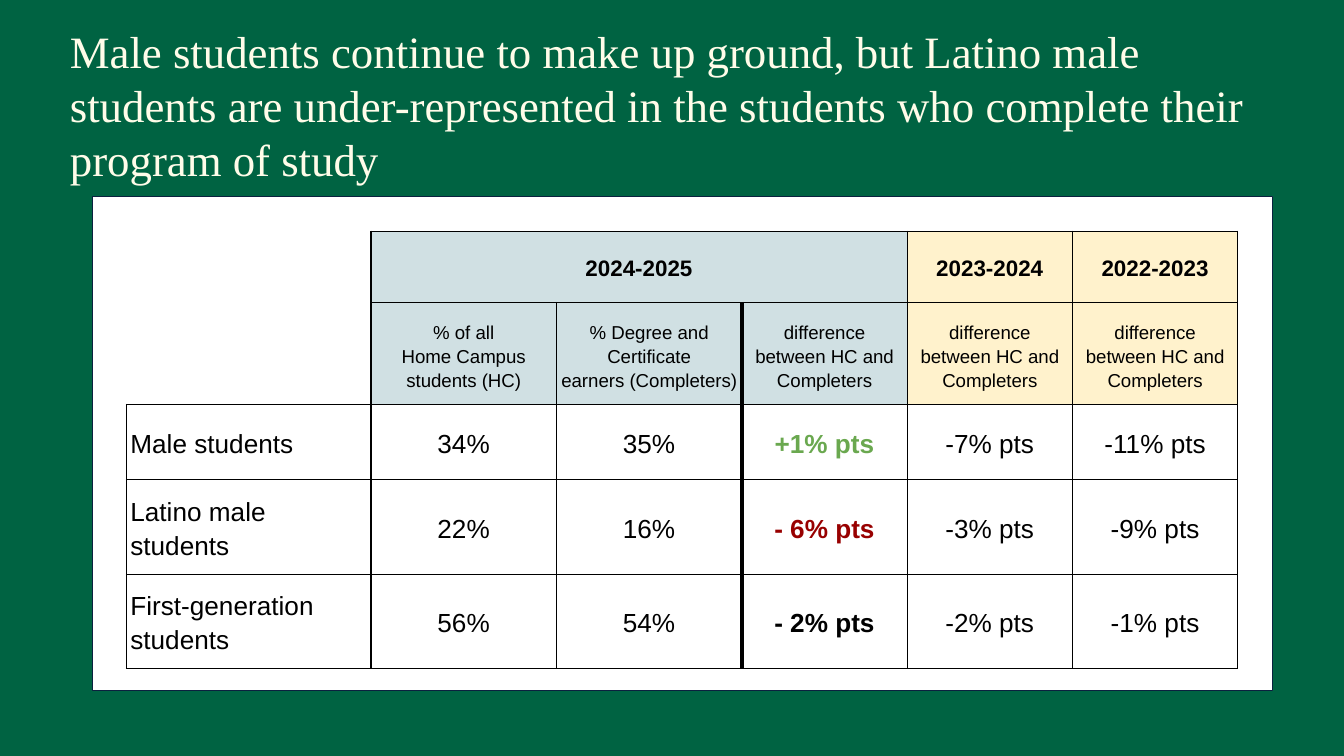
from lxml import etree
from pptx import Presentation
from pptx.dml.color import RGBColor
from pptx.enum.shapes import MSO_SHAPE
from pptx.enum.text import MSO_ANCHOR, MSO_AUTO_SIZE, PP_ALIGN
from pptx.oxml.ns import qn
from pptx.util import Inches, Pt

RECTANGLE = MSO_SHAPE.RECTANGLE
TOP, MIDDLE, BOTTOM = MSO_ANCHOR.TOP, MSO_ANCHOR.MIDDLE, MSO_ANCHOR.BOTTOM
LEFT, CENTER = PP_ALIGN.LEFT, PP_ALIGN.CENTER
NO_AUTOFIT = MSO_AUTO_SIZE.NONE

GREEN = RGBColor(0x00, 0x63, 0x42)
CREAM = RGBColor(0xFF, 0xFC, 0xE9)
NAVY = RGBColor(0x0B, 0x21, 0x3F)
WHITE = RGBColor(0xFF, 0xFF, 0xFF)
BLACK = RGBColor(0x00, 0x00, 0x00)
PALE_BLUE = RGBColor(0xD0, 0xE0, 0xE3)
PALE_YELLOW = RGBColor(0xFF, 0xF2, 0xCC)
GAIN_GREEN = RGBColor(0x6A, 0xA8, 0x4F)
LOSS_RED = RGBColor(0x98, 0x00, 0x00)

TITLE = (
    "Male students continue to make up ground, but Latino male students are "
    "under-represented in the students who complete their program of study"
)
DIFFERENCE = "difference\nbetween HC and Completers"
ROWS = [
    ["", "2024-2025", "", "", "2023-2024", "2022-2023"],
    ["", "% of all\nHome Campus\nstudents (HC)",
     "% Degree and Certificate\nearners (Completers)",
     DIFFERENCE, DIFFERENCE, DIFFERENCE],
    ["Male students", "34%", "35%", "+1% pts", "-7% pts", "-11% pts"],
    ["Latino male students", "22%", "16%", "- 6% pts", "-3% pts", "-9% pts"],
    ["First-generation students", "56%", "54%", "- 2% pts", "-2% pts", "-1% pts"],
]
COLUMN_WIDTHS = [1.82, 1.38, 1.38, 1.23, 1.23, 1.23]
ROW_HEIGHTS = [0.53, 0.76, 0.56, 0.56, 0.56]
HEADER_ROWS = 2
FONT_SIZES = [12, 10, 14, 14, 14]
CURRENT_YEAR_LAST = 3
HIGHLIGHT_COLUMN = 3
HIGHLIGHTS = {2: GAIN_GREEN, 3: LOSS_RED}
THIN, THICK = 0.75, 2.25


def set_borders(cell, row, column):
    widths = dict.fromkeys("LRTB", THIN)
    if row < HEADER_ROWS and column == 0:
        widths.update(L=0, T=0, B=THIN if row == HEADER_ROWS - 1 else 0)
    elif row > 0 and column == HIGHLIGHT_COLUMN - 1:
        widths["R"] = THICK
    elif row > 0 and column == HIGHLIGHT_COLUMN:
        widths["L"] = THICK
    properties = cell._tc.get_or_add_tcPr()
    for side, width in widths.items():
        line = etree.SubElement(properties, qn(f"a:ln{side}"), w=str(int(Pt(width))))
        if width:
            fill = etree.SubElement(line, qn("a:solidFill"))
            etree.SubElement(fill, qn("a:srgbClr"), val=str(BLACK))
        else:
            etree.SubElement(line, qn("a:noFill"))


def fill_cell(cell, row, column):
    if row >= HEADER_ROWS:
        color = WHITE
    elif column == 0:
        cell.fill.background()
        return
    else:
        color = PALE_BLUE if column <= CURRENT_YEAR_LAST else PALE_YELLOW
    cell.fill.solid()
    cell.fill.fore_color.rgb = color


def write_cell(cell, row, column):
    cell.margin_left = cell.margin_right = Inches(0.03)
    cell.margin_top = cell.margin_bottom = Inches(0.1)
    cell.vertical_anchor = BOTTOM if row == 1 else MIDDLE
    cell.text = ROWS[row][column]
    highlighted = row >= HEADER_ROWS and column == HIGHLIGHT_COLUMN
    for paragraph in cell.text_frame.paragraphs:
        paragraph.alignment = CENTER if column else LEFT
        paragraph.line_spacing = 1.15
        paragraph.font.name = "Arial"
        paragraph.font.size = Pt(FONT_SIZES[row])
        paragraph.font.bold = row == 0 or highlighted
        paragraph.font.color.rgb = HIGHLIGHTS.get(row, BLACK) if highlighted else BLACK


def add_results_table(slide):
    table = slide.shapes.add_table(
        len(ROWS), len(COLUMN_WIDTHS), Inches(0.94), Inches(1.72),
        Inches(sum(COLUMN_WIDTHS)), Inches(sum(ROW_HEIGHTS)),
    ).table
    table.first_row = table.horz_banding = False
    for column, width in zip(table.columns, COLUMN_WIDTHS):
        column.width = Inches(width)
    for row, height in zip(table.rows, ROW_HEIGHTS):
        row.height = Inches(height)
    for row in range(len(ROWS)):
        for column in range(len(COLUMN_WIDTHS)):
            cell = table.cell(row, column)
            set_borders(cell, row, column)
            fill_cell(cell, row, column)
            write_cell(cell, row, column)
    table.cell(0, 1).merge(table.cell(0, CURRENT_YEAR_LAST))


def add_panel(slide):
    panel = slide.shapes.add_shape(
        RECTANGLE, Inches(0.69), Inches(1.46), Inches(8.78), Inches(3.68))
    panel.shadow.inherit = False
    panel.fill.solid()
    panel.fill.fore_color.rgb = WHITE
    panel.line.color.rgb = NAVY
    panel.line.width = Pt(0.75)


def write_title(slide):
    title = slide.shapes.title
    title.left, title.top = Inches(0.42), Inches(0.08)
    title.width, title.height = Inches(9.16), Inches(0.84)
    frame = title.text_frame
    frame.text = TITLE
    frame.word_wrap = True
    frame.auto_size = NO_AUTOFIT
    frame.vertical_anchor = TOP
    frame.margin_left = frame.margin_right = Inches(0.1)
    frame.margin_top = frame.margin_bottom = Inches(0.1)
    paragraph = frame.paragraphs[0]
    paragraph.alignment = LEFT
    paragraph.line_spacing = 1.0
    paragraph.font.name = "Times New Roman"
    paragraph.font.size = Pt(24)
    paragraph.font.color.rgb = CREAM


def main():
    presentation = Presentation()
    presentation.slide_width = Inches(10)
    presentation.slide_height = presentation.slide_width * 9 // 16
    slide = presentation.slides.add_slide(presentation.slide_layouts[5])
    slide.background.fill.solid()
    slide.background.fill.fore_color.rgb = GREEN
    add_panel(slide)
    add_results_table(slide)
    write_title(slide)
    presentation.save("out.pptx")


if __name__ == "__main__":
    main()
